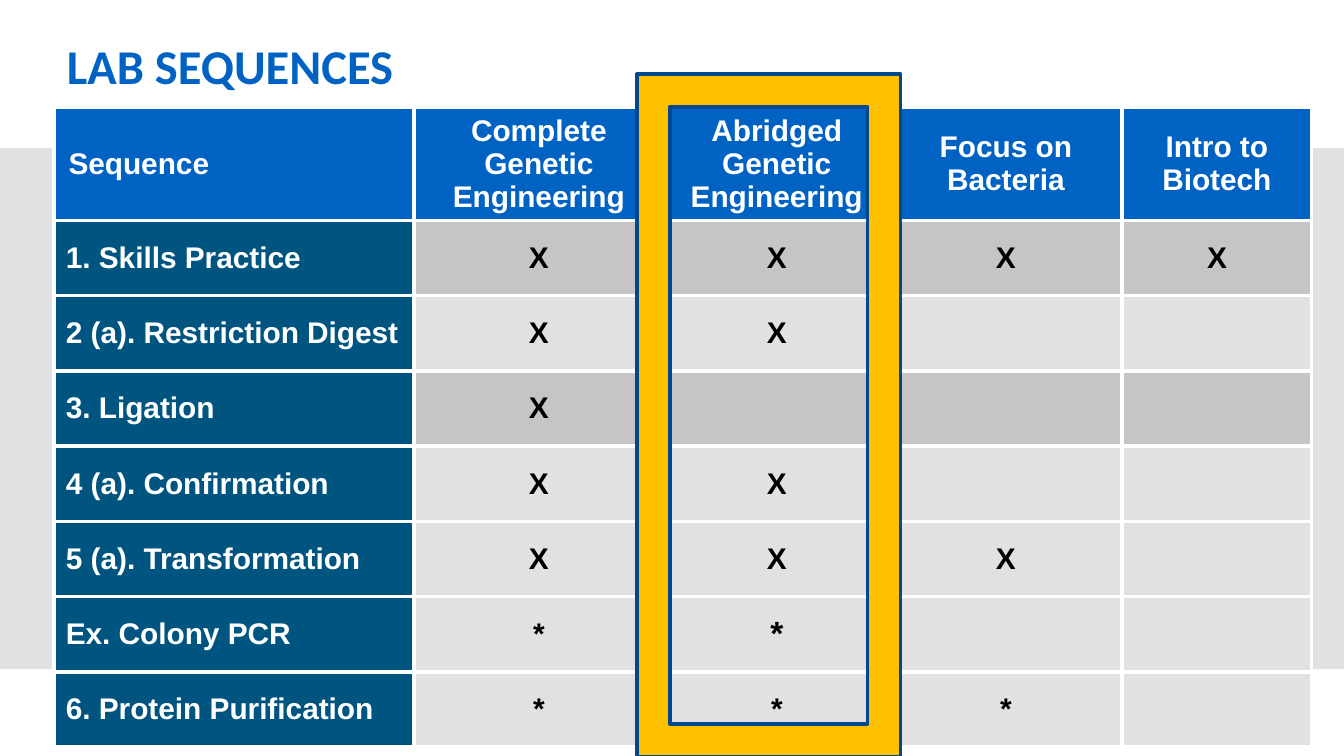
from dataclasses import dataclass

from lxml.etree import SubElement
from pptx import Presentation
from pptx.dml.color import RGBColor
from pptx.enum.shapes import MSO_SHAPE as Shape
from pptx.enum.text import MSO_ANCHOR as Anchor, PP_ALIGN as Align
from pptx.oxml.ns import qn
from pptx.util import Inches, Pt


@dataclass(frozen=True)
class Theme:
    blue: str = "0063C3"
    teal: str = "005480"
    navy: str = "00488E"
    gold: str = "FFC000"
    dark: str = "C6C4C7"
    light: str = "E1E1E3"
    white: str = "FFFFFF"
    black: str = "000000"
    head: str = "Calibri"
    body: str = "Arial"
    title: int = 26
    text: int = 16
    star: int = 18
    rule: float = 2.25
    edge: int = 2


THEME = Theme()
WIDTHS = [2.68, 1.86, 1.68, 1.73, 1.41]
HEIGHTS = [0.84] + [0.56] * 7
HEADS = ["Sequence", "Complete Genetic Engineering",
         "Abridged Genetic Engineering", "Focus on Bacteria",
         "Intro to Biotech"]
# Each lab: name, one mark per sequence, shade of the row
LABS = [
    ("1. Skills Practice", "XXXX", THEME.dark),
    ("2 (a). Restriction Digest", "XX", THEME.light),
    ("3. Ligation", "X", THEME.dark),
    ("4 (a). Confirmation", "XX", THEME.light),
    ("5 (a). Transformation", "XXX", THEME.light),
    ("Ex. Colony PCR", "**", THEME.light),
    ("6. Protein Purification", "***", THEME.light),
]
BIG = (6, 2)  # row and column of the larger star


def style(para, size, color, face=THEME.body):
    font = para.font
    font.name, font.size, font.bold = face, Pt(size), True
    font.color.rgb = RGBColor.from_string(color)


def add_box(slide, kind, place, fill, line=None):
    box = slide.shapes.add_shape(kind, *map(Inches, place))
    box.shadow.inherit = False
    box.fill.solid()
    box.fill.fore_color.rgb = RGBColor.from_string(fill)
    if line:
        box.line.color.rgb = RGBColor.from_string(line)
        box.line.width = Pt(THEME.edge)
    else:
        box.line.fill.background()
    return box


def add_title(slide, text):
    box = slide.shapes.add_textbox(*map(Inches, (0.4, 0.21, 9.2, 0.54)))
    frame = box.text_frame
    frame.word_wrap = True
    frame.vertical_anchor = Anchor.BOTTOM
    para = frame.paragraphs[0]
    para.text = text
    style(para, THEME.title, THEME.blue, THEME.head)


def add_rules(cell):
    """Draw the four borders; they must come before the fill in the XML."""
    props = cell._tc.get_or_add_tcPr()
    for side in ("lnL", "lnR", "lnT", "lnB"):
        line = SubElement(props, qn(f"a:{side}"), w=str(Pt(THEME.rule)))
        fill = SubElement(line, qn("a:solidFill"))
        SubElement(fill, qn("a:srgbClr"), val=THEME.white)


def fill_cell(cell, text, fill, color, size, left=None):
    """Fill a cell; text is centred unless a left inset is given."""
    add_rules(cell)
    cell.fill.solid()
    cell.fill.fore_color.rgb = RGBColor.from_string(fill)
    cell.vertical_anchor = Anchor.MIDDLE
    cell.margin_left = Inches(left or 0.05)
    cell.margin_right = Inches(0.05)
    cell.margin_top = cell.margin_bottom = Inches(0.02)
    para = cell.text_frame.paragraphs[0]
    para.text = text
    para.alignment = Align.LEFT if left else Align.CENTER
    style(para, size, color)


def add_grid(slide):
    table = slide.shapes.add_table(
        len(HEIGHTS), len(WIDTHS), Inches(0.4), Inches(0.8),
        Inches(sum(WIDTHS)), Inches(sum(HEIGHTS))).table
    for col, width in zip(table.columns, WIDTHS):
        col.width = Inches(width)
    for row, height in zip(table.rows, HEIGHTS):
        row.height = Inches(height)
    for c, head in enumerate(HEADS):
        fill_cell(table.cell(0, c), head, THEME.blue, THEME.white,
                  THEME.text, None if c else 0.11)
    for r, (name, marks, shade) in enumerate(LABS, 1):
        fill_cell(table.cell(r, 0), name, THEME.teal, THEME.white,
                  THEME.text, 0.09)
        for c, mark in enumerate(marks.ljust(len(HEADS) - 1), 1):
            size = THEME.star if (r, c) == BIG else THEME.text
            fill_cell(table.cell(r, c), mark.strip(), shade, THEME.black, size)


def main():
    deck = Presentation()
    deck.slide_width = Inches(10)
    deck.slide_height = deck.slide_width * 9 // 16
    slide = deck.slides.add_slide(deck.slide_layouts[6])
    add_box(slide, Shape.RECTANGLE, (0, 1.1, 10, 3.88), THEME.light)
    add_grid(slide)
    add_title(slide, "LAB SEQUENCES")
    focus = add_box(slide, Shape.FRAME, (4.74, 0.55, 1.96, 5.08),
                    THEME.gold, THEME.navy)
    focus.adjustments[0] = 0.125
    deck.save("out.pptx")


if __name__ == "__main__":
    main()
